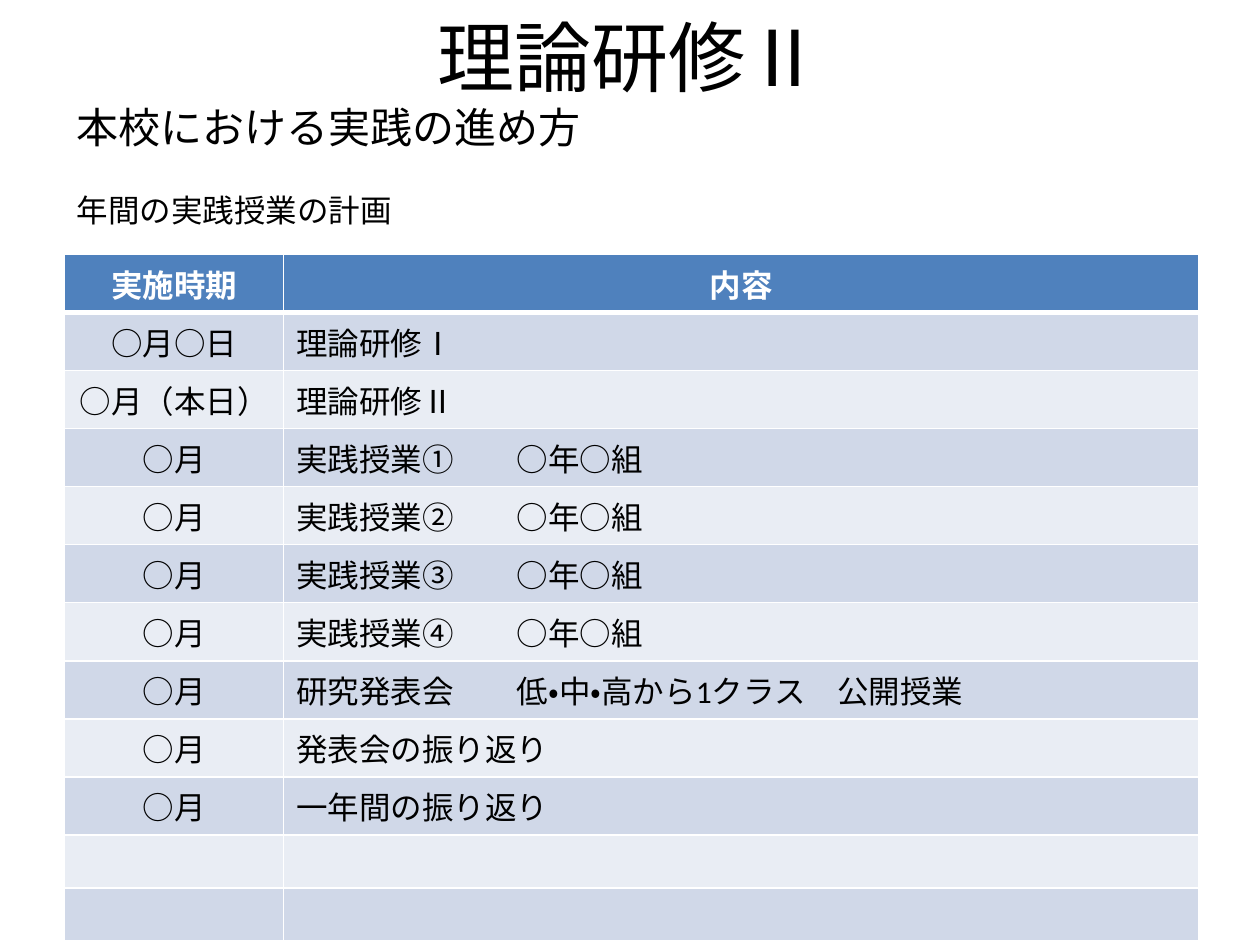
from pptx import Presentation
from pptx.dml.color import RGBColor
from pptx.enum.lang import MSO_LANGUAGE_ID
from pptx.enum.text import MSO_ANCHOR, PP_ALIGN
from pptx.oxml import parse_xml
from pptx.oxml.ns import nsdecls
from pptx.util import Cm, Pt

CENTER, LEFT = PP_ALIGN.CENTER, PP_ALIGN.LEFT
MIDDLE, TOP = MSO_ANCHOR.MIDDLE, MSO_ANCHOR.TOP
JAPANESE = MSO_LANGUAGE_ID.JAPANESE

# Content
TITLE = "理論研修Ⅱ"
LEADS = [("本校における実践の進め方", 24, "Arial"),
         ("年間の実践授業の計画", 18, "Calibri")]
HEAD = ("実施時期", "内容")
PLAN = [
    ("○月○日", "理論研修Ⅰ"),
    ("○月（本日）", "理論研修Ⅱ"),
    *[("○月", f"実践授業{mark}　　○年○組") for mark in "①②③④"],
    ("○月", "研究発表会　　低・中・高から1クラス　公開授業"),
    ("○月", "発表会の振り返り"),
    ("○月", "一年間の振り返り"),
    ("", ""),
    ("", ""),
]
COLORS = {"head": "4F81BD", "odd": "D0D8E8", "even": "E9EDF4",
          "ink": "000000", "white": "FFFFFF"}
WIDTHS = (4.42, 18.44)
FULL_H, BLANK_H = 1.17, 1.07


def style(para, size, font="Calibri", color="ink", align=LEFT, bold=False):
    para.alignment = align
    for run in para.runs:
        run.font.size = Pt(size)
        run.font.name = font
        run.font.bold = bold
        run.font.language_id = JAPANESE
        run.font.color.rgb = RGBColor.from_string(COLORS[color])


def add_text(slide, left, top, width, height, anchor):
    box = slide.shapes.add_textbox(Cm(left), Cm(top), Cm(width), Cm(height))
    frame = box.text_frame
    frame.word_wrap = True
    frame.vertical_anchor = anchor
    return frame


def set_edges(cell, above, below):
    props = cell._tc.get_or_add_tcPr()
    edges = (("lnL", 1), ("lnR", 1), ("lnT", above), ("lnB", below))
    for spot, (tag, width) in enumerate(edges):
        props.insert(spot, parse_xml(
            f'<a:{tag} {nsdecls("a")} w="{Pt(width)}"><a:solidFill>'
            f'<a:srgbClr val="{COLORS["white"]}"/></a:solidFill></a:{tag}>'))


def add_plan(slide):
    rows = [HEAD, *PLAN]
    sizes = [FULL_H if any(row) else BLANK_H for row in rows]
    table = slide.shapes.add_table(
        len(rows), len(WIDTHS), Cm(1.3), Cm(5.13),
        Cm(sum(WIDTHS)), Cm(sum(sizes))).table
    for col, width in zip(table.columns, WIDTHS):
        col.width = Cm(width)
    for i, (row, size) in enumerate(zip(rows, sizes)):
        top = i == 0
        table.rows[i].height = Cm(size)
        fill = "head" if top else "odd" if i % 2 else "even"
        for j, text in enumerate(row):
            cell = table.cell(i, j)
            cell.fill.solid()
            cell.fill.fore_color.rgb = RGBColor.from_string(COLORS[fill])
            set_edges(cell, 3 if i == 1 else 1, 3 if top else 1)
            cell.text_frame.text = text
            style(cell.text_frame.paragraphs[0], 18,
                  color="white" if top else "ink",
                  align=CENTER if top or j == 0 else LEFT, bold=top)


def main():
    deck = Presentation()
    deck.slide_width, deck.slide_height = Cm(25.4), Cm(19.05)
    slide = deck.slides.add_slide(deck.slide_layouts[6])

    # Title
    frame = add_text(slide, 1.27, -0.08, 22.86, 2.39, MIDDLE)
    frame.text = TITLE
    style(frame.paragraphs[0], 44, align=CENTER)

    # Schedule table
    add_plan(slide)

    # Lead lines
    frame = add_text(slide, 1.3, 1.93, 22.4, 2.82, TOP)
    frame.text = "\n".join(text for text, _, _ in LEADS)
    for para, (_, size, font) in zip(frame.paragraphs, LEADS):
        style(para, size, font)
    frame.paragraphs[1].space_before = Pt(22)

    deck.save("out.pptx")


if __name__ == "__main__":
    main()
